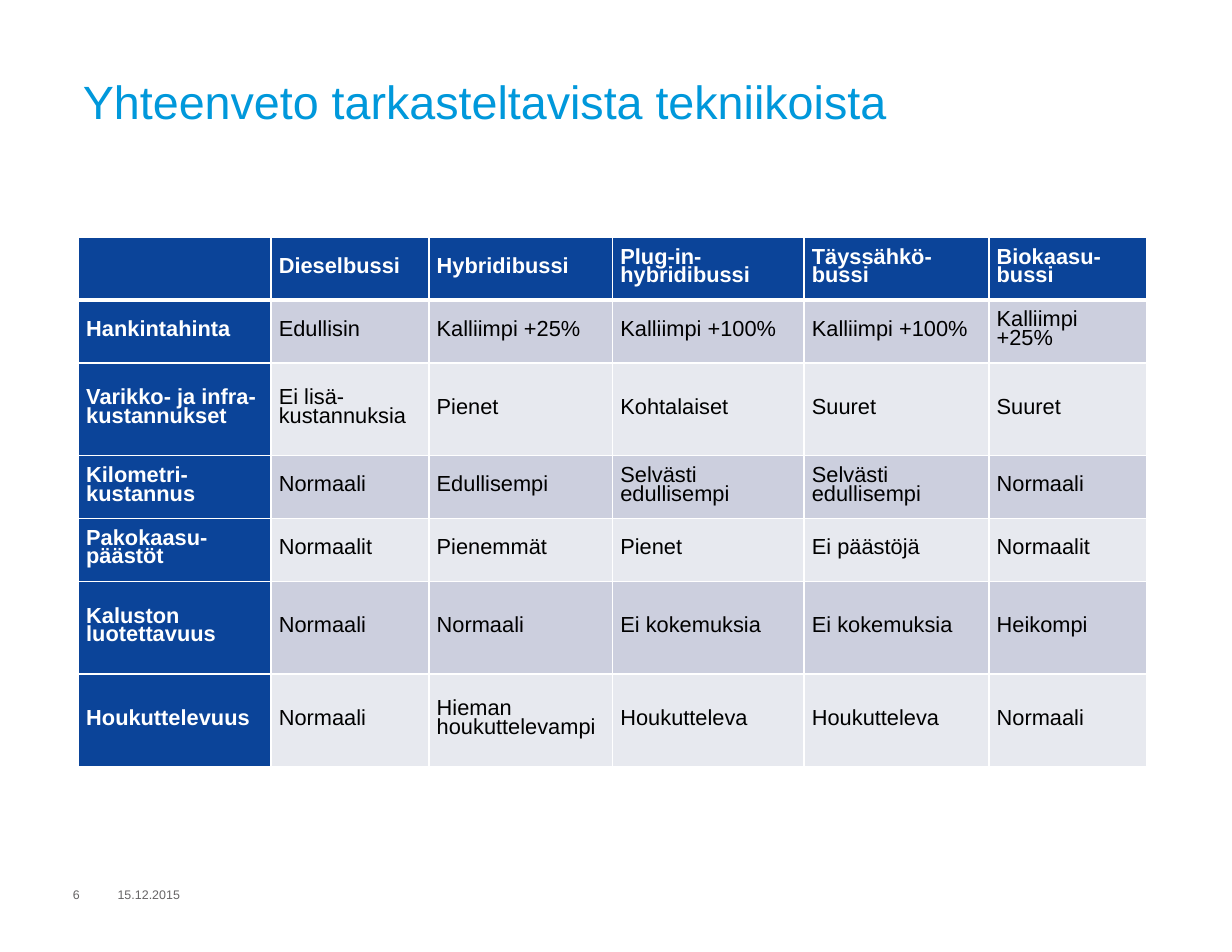
from lxml import etree
from pptx import Presentation
from pptx.dml.color import RGBColor
from pptx.enum.text import MSO_ANCHOR, PP_ALIGN
from pptx.oxml.ns import qn
from pptx.util import Inches, Pt

MIDDLE, TOP = MSO_ANCHOR.MIDDLE, MSO_ANCHOR.TOP
LEFT, JUSTIFY = PP_ALIGN.LEFT, PP_ALIGN.JUSTIFY
FONT = "Arial"
COLORS = {
    "title": "0098DB",
    "footer": "666465",
    "header": "0B4499",
    "odd_row": "CCCFDE",
    "even_row": "E7E9EF",
    "white": "FFFFFF",
    "black": "000000",
}
COLUMN_WIDTHS = [1.72, 1.41, 1.64, 1.71, 1.65, 1.41]
ROW_HEIGHTS = [0.56, 0.56, 0.83, 0.56, 0.56, 0.83, 0.83]
ROWS = [
    ["", "Dieselbussi", "Hybridibussi", "Plug-in-hybridibussi", "Täyssähkö-bussi", "Biokaasu-bussi"],
    ["Hankintahinta", "Edullisin", "Kalliimpi +25%", "Kalliimpi +100%", "Kalliimpi +100%", "Kalliimpi +25%"],
    ["Varikko- ja infra-kustannukset", "Ei lisä-kustannuksia", "Pienet", "Kohtalaiset", "Suuret", "Suuret"],
    ["Kilometri-kustannus", "Normaali", "Edullisempi", "Selvästi edullisempi", "Selvästi edullisempi", "Normaali"],
    ["Pakokaasu-päästöt", "Normaalit", "Pienemmät", "Pienet", "Ei päästöjä", "Normaalit"],
    ["Kaluston luotettavuus", "Normaali", "Normaali", "Ei kokemuksia", "Ei kokemuksia", "Heikompi"],
    ["Houkuttelevuus", "Normaali", "Hieman houkuttelevampi", "Houkutteleva", "Houkutteleva", "Normaali"],
]


def add_run(paragraph, text, size, color, bold=False):
    run = paragraph.add_run()
    run.text = text
    run.font.name = FONT
    run.font.size = Pt(size)
    run.font.bold = bold
    run.font.color.rgb = RGBColor.from_string(COLORS[color])


def add_border(cell, side, width):
    """Draw a white line on one side (L, R, T or B); call before setting the fill."""
    line = etree.SubElement(cell._tc.get_or_add_tcPr(), qn(f"a:ln{side}"), w=str(Pt(width)))
    fill = etree.SubElement(line, qn("a:solidFill"))
    etree.SubElement(fill, qn("a:srgbClr"), val=COLORS["white"])


presentation = Presentation()
presentation.slide_width = Inches(11)
presentation.slide_height = Inches(8.5)
slide = presentation.slides.add_slide(presentation.slide_layouts[5])

# Title
title = slide.shapes.title
title.left, title.top = Inches(0.62), Inches(0.63)
title.width, title.height = Inches(9.76), Inches(1.18)
frame = title.text_frame
frame.word_wrap = True
frame.vertical_anchor = TOP
frame.margin_left = frame.margin_right = Inches(0.12)
frame.margin_top = frame.margin_bottom = Inches(0.08)
paragraph = frame.paragraphs[0]
paragraph.alignment = LEFT
paragraph.line_spacing = 0.9
add_run(paragraph, "Yhteenveto tarkasteltavista tekniikoista", 30, "title")

# Date and slide number
for text, left, width in [("15.12.2015", 1.01, 1.73), ("6", 0.61, 0.4)]:
    box = slide.shapes.add_textbox(Inches(left), Inches(7.87), Inches(width), Inches(0.24))
    frame = box.text_frame
    frame.word_wrap = True
    frame.vertical_anchor = MIDDLE
    frame.margin_left = frame.margin_right = Inches(0.04)
    frame.margin_top = frame.margin_bottom = Inches(0.04)
    add_run(frame.paragraphs[0], text, 8, "footer")

# Comparison table
table = slide.shapes.add_table(
    len(ROWS), len(COLUMN_WIDTHS), Inches(0.7), Inches(2.12),
    Inches(sum(COLUMN_WIDTHS)), Inches(sum(ROW_HEIGHTS)),
).table
for column, width in zip(table.columns, COLUMN_WIDTHS):
    column.width = Inches(width)
for row, height in zip(table.rows, ROW_HEIGHTS):
    row.height = Inches(height)

for row_index, texts in enumerate(ROWS):
    band = "odd_row" if row_index % 2 else "even_row"
    for column_index, text in enumerate(texts):
        is_header = row_index == 0 or column_index == 0
        cell = table.cell(row_index, column_index)
        cell.vertical_anchor = MIDDLE
        cell.margin_left = cell.margin_right = Inches(0.07)
        cell.margin_top = cell.margin_bottom = 0

        add_border(cell, "L", 1)
        add_border(cell, "R", 1)
        add_border(cell, "T", 3 if row_index == 1 else 1)
        add_border(cell, "B", 3 if row_index == 0 else 1)
        cell.fill.solid()
        cell.fill.fore_color.rgb = RGBColor.from_string(COLORS["header" if is_header else band])

        if text:
            paragraph = cell.text_frame.paragraphs[0]
            # The long label in the second body row would stretch if justified
            paragraph.alignment = JUSTIFY if is_header and row_index != 2 else LEFT
            paragraph.line_spacing = Pt(12)
            paragraph.space_after = Pt(6)
            add_run(paragraph, text, 14, "white" if is_header else "black", is_header)

presentation.save("out.pptx")
